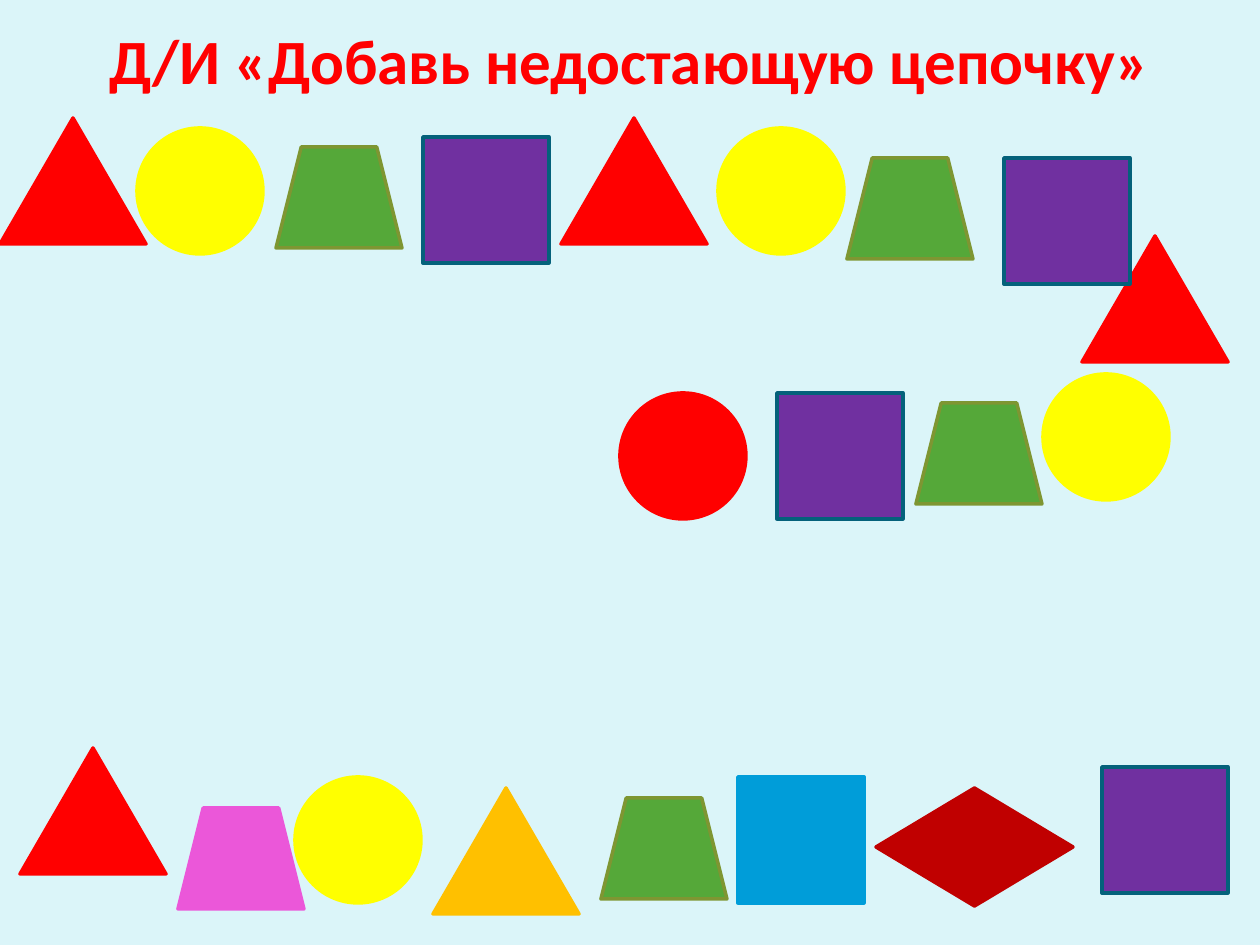
import dataclasses

import pptx
import pptx.dml.color
import pptx.enum.shapes
import pptx.enum.text
import pptx.slide
import pptx.util

EMU_PER_PX = 914400 / 126
SHAPES = pptx.enum.shapes.MSO_SHAPE

COLOURS = {
    "background": "DBF5F9",
    "red": "FF0000",
    "purple": "7030A0",
    "teal": "04617B",
    "yellow": "FFFF00",
    "green": "55A839",
    "olive": "7E9632",
    "pink": "EB57D9",
    "dark red": "C00000",
    "orange": "FFC000",
    "blue": "009DD9",
}


@dataclasses.dataclass(frozen=True)
class Figure:
    preset: SHAPES
    width: int
    height: int
    fill: str
    outline: str
    positions: tuple[tuple[int, int], ...]


# Each kind of figure with all its places, from back to front
FIGURES = [
    Figure(SHAPES.ISOSCELES_TRIANGLE, 146, 126, "red", "red",
           ((0, 118), (20, 748), (561, 118), (1082, 236))),
    Figure(SHAPES.RECTANGLE, 126, 126, "purple", "teal",
           ((423, 137), (777, 393), (1102, 767), (1004, 158))),
    Figure(SHAPES.OVAL, 126, 126, "yellow", "yellow",
           ((718, 128), (1043, 374), (137, 128), (295, 777))),
    Figure(SHAPES.TRAPEZOID, 126, 101, "green", "olive",
           ((847, 158), (276, 147), (916, 403), (601, 798))),
    Figure(SHAPES.TRAPEZOID, 126, 101, "pink", "pink", ((178, 808),)),
    Figure(SHAPES.FLOWCHART_DECISION, 197, 118, "dark red", "dark red", ((876, 788),)),
    Figure(SHAPES.ISOSCELES_TRIANGLE, 146, 126, "orange", "orange", ((433, 788),)),
    Figure(SHAPES.OVAL, 126, 126, "red", "red", ((620, 393),)),
    Figure(SHAPES.RECTANGLE, 126, 126, "blue", "blue", ((738, 777),)),
]


def px(length: int) -> pptx.util.Emu:
    return pptx.util.Emu(round(length * EMU_PER_PX))


def colour(name: str) -> pptx.dml.color.RGBColor:
    return pptx.dml.color.RGBColor.from_string(COLOURS[name])


def draw_title(slide: pptx.slide.Slide, text: str) -> None:
    title = slide.shapes.title
    title.left, title.top = px(63), px(20)
    title.width, title.height = px(1134), px(79)
    frame = title.text_frame
    frame.word_wrap = True
    frame.auto_size = pptx.enum.text.MSO_AUTO_SIZE.NONE
    frame.vertical_anchor = pptx.enum.text.MSO_ANCHOR.MIDDLE
    paragraph = frame.paragraphs[0]
    paragraph.alignment = pptx.enum.text.PP_ALIGN.CENTER
    run = paragraph.add_run()
    run.text = text
    run.font.name = "Calibri"
    run.font.size = pptx.util.Pt(36)
    run.font.bold = True
    run.font.color.rgb = colour("red")


def draw_figure(slide: pptx.slide.Slide, figure: Figure) -> None:
    for left, top in figure.positions:
        shape = slide.shapes.add_shape(
            figure.preset, px(left), px(top), px(figure.width), px(figure.height))
        shape.shadow.inherit = False
        shape.fill.solid()
        shape.fill.fore_color.rgb = colour(figure.fill)
        shape.line.color.rgb = colour(figure.outline)
        shape.line.width = pptx.util.Pt(2)


def main() -> None:
    presentation = pptx.Presentation()
    presentation.slide_width, presentation.slide_height = px(1260), px(945)
    slide = presentation.slides.add_slide(presentation.slide_layouts[5])

    # Background and heading
    slide.background.fill.solid()
    slide.background.fill.fore_color.rgb = colour("background")
    draw_title(slide, "Д/И «Добавь недостающую цепочку»")

    # Chain of figures and the row to choose from
    for figure in FIGURES:
        draw_figure(slide, figure)

    presentation.save("out.pptx")


if __name__ == "__main__":
    main()
